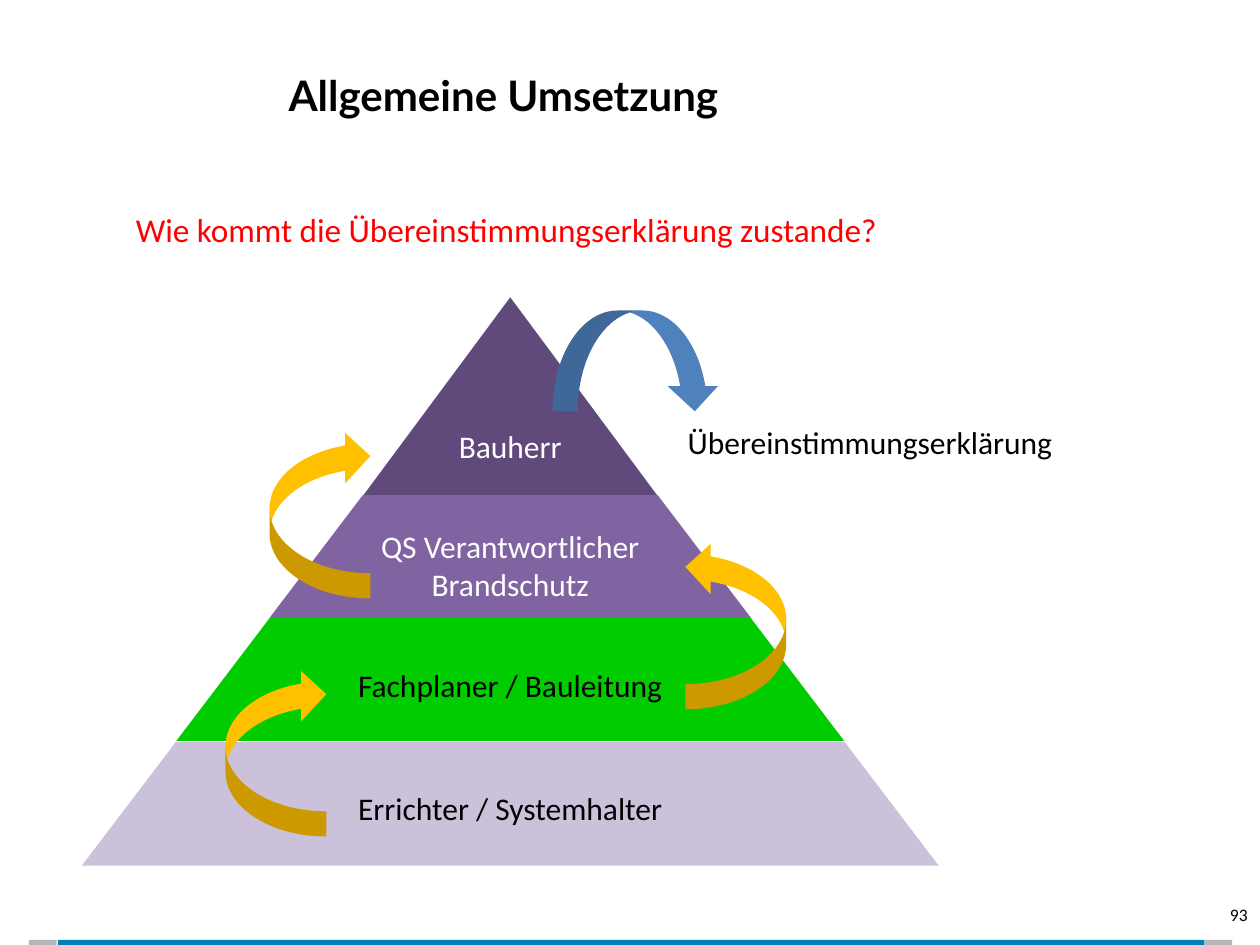
"""Build a slide with a pyramid of responsibilities in fire protection."""
from dataclasses import dataclass

from pptx import Presentation
from pptx.dml.color import RGBColor
from pptx.enum import shapes, text
from pptx.util import Inches, Pt

SHAPE = shapes.MSO_SHAPE
ALIGN = text.PP_ALIGN
ANCHOR = text.MSO_ANCHOR
CENTRE_X = 4.05
SLOPE = 0.76


@dataclass
class Tier:
    label: str
    top: float
    width: float
    height: float
    fill: str
    color: str
    kind: int = SHAPE.TRAPEZOID


@dataclass
class Arrow:
    left: float
    top: float
    fill: str = "FFC000"
    mirrored: bool = True
    rotation: int = 0


TIERS = [
    Tier("Bauherr", 2.36, 2.33, 1.57, "604A7B", "FFFFFF", SHAPE.ISOSCELES_TRIANGLE),
    Tier("QS Verantwortlicher Brandschutz", 3.93, 3.83, 0.98, "8064A2", "FFFFFF"),
    Tier("Fachplaner / Bauleitung", 4.9, 5.3, 0.98, "00CC00", "000000"),
    Tier("Errichter / Systemhalter", 5.89, 6.8, 0.98, "CCC1DA", "000000"),
]
ARROWS = [
    Arrow(5.44, 4.3, mirrored=False),
    Arrow(2.14, 3.42),
    Arrow(1.79, 5.31),
    Arrow(4.65, 2.2, fill="4F81BD", rotation=90),
]
FOOTER_BARS = [(0.23, 0.22, "B4B6B9"), (9.56, 0.22, "B4B6B9"), (0.46, 9.1, "0080B7")]


def rgb(value: str) -> RGBColor:
    """Turn a hex string into a colour."""
    return RGBColor.from_string(value)


def write(box, words: str, *, size: float = 18, color: str = "000000",
          font: str = "Calibri", bold: bool = False, align=ALIGN.LEFT,
          anchor=ANCHOR.TOP, line_spacing=None):
    """Fill a box with one formatted paragraph."""
    frame = box.text_frame
    frame.word_wrap = True
    frame.vertical_anchor = anchor
    para = frame.paragraphs[0]
    para.alignment = align
    para.line_spacing = line_spacing
    span = para.add_run()
    span.text = words
    span.font.size = Pt(size)
    span.font.name = font
    span.font.bold = bold
    span.font.color.rgb = rgb(color)
    return frame


def add_text(page, left: float, top: float, width: float, height: float,
             words: str, **style):
    """Add a text box and return its text frame."""
    box = page.shapes.add_textbox(*map(Inches, (left, top, width, height)))
    return write(box, words, **style)


def add_filled(page, kind: int, left: float, top: float, width: float,
               height: float, fill: str):
    """Add a preset shape with a plain fill and no outline."""
    box = page.shapes.add_shape(kind, *map(Inches, (left, top, width, height)))
    box.shadow.inherit = False
    box.fill.solid()
    box.fill.fore_color.rgb = rgb(fill)
    box.line.fill.background()
    return box


def add_tier(page, tier: Tier) -> None:
    """Add one labelled level of the pyramid."""
    box = add_filled(page, tier.kind, CENTRE_X - tier.width / 2, tier.top,
                     tier.width, tier.height, tier.fill)
    if tier.kind == SHAPE.TRAPEZOID:
        box.adjustments[0] = SLOPE
    write(box, tier.label, color=tier.color, align=ALIGN.CENTER, anchor=ANCHOR.MIDDLE)


def add_arrow(page, arrow: Arrow) -> None:
    """Add a curved arrow that leads up from one level."""
    box = add_filled(page, SHAPE.CURVED_LEFT_ARROW, arrow.left, arrow.top,
                     0.8, 1.33, arrow.fill)
    box.rotation = arrow.rotation
    frame = box.element.spPr.get_or_add_xfrm()
    frame.set("flipV", "1")
    if arrow.mirrored:
        frame.set("flipH", "1")


def main() -> None:
    """Build and save the deck."""
    deck = Presentation()
    deck.slide_width, deck.slide_height = Inches(10), Inches(7.5)
    page = deck.slides.add_slide(deck.slide_layouts[5])

    for left, width, fill in FOOTER_BARS:
        add_filled(page, SHAPE.RECTANGLE, left, 7.46, width, 0.06, fill)

    title = page.shapes.title
    title.left, title.top = Inches(2.19), Inches(0.21)
    title.width, title.height = Inches(5.72), Inches(0.47)
    write(title, "Allgemeine Umsetzung", size=24, font="Lato", bold=True,
          line_spacing=Pt(50))
    title.text_frame.auto_size = text.MSO_AUTO_SIZE.NONE

    question = add_text(page, 0.98, 1.15, 8.03, 5.89,
                        "Wie kommt die Übereinstimmungserklärung zustande?",
                        size=19, color="FF0000")
    question.margin_top = Inches(0.51)

    for tier in TIERS:
        add_tier(page, tier)
    for arrow in ARROWS:
        add_arrow(page, arrow)

    add_text(page, 5.36, 3.31, 3.34, 0.4, "Übereinstimmungserklärung")
    add_text(page, 7.67, 7.06, 2.33, 0.4, "93", size=10,
             align=ALIGN.RIGHT, anchor=ANCHOR.MIDDLE)
    deck.save("out.pptx")


if __name__ == "__main__":
    main()
